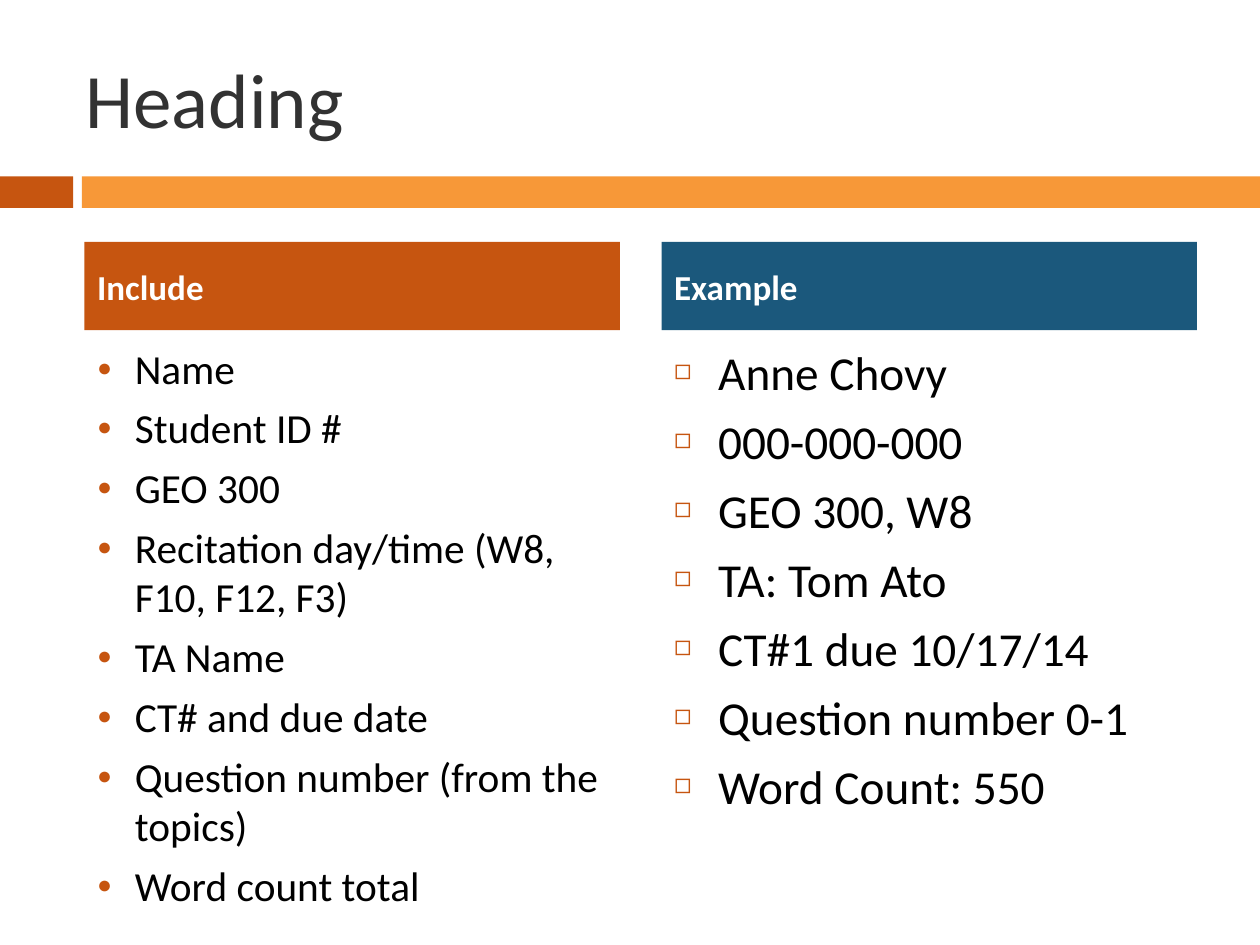
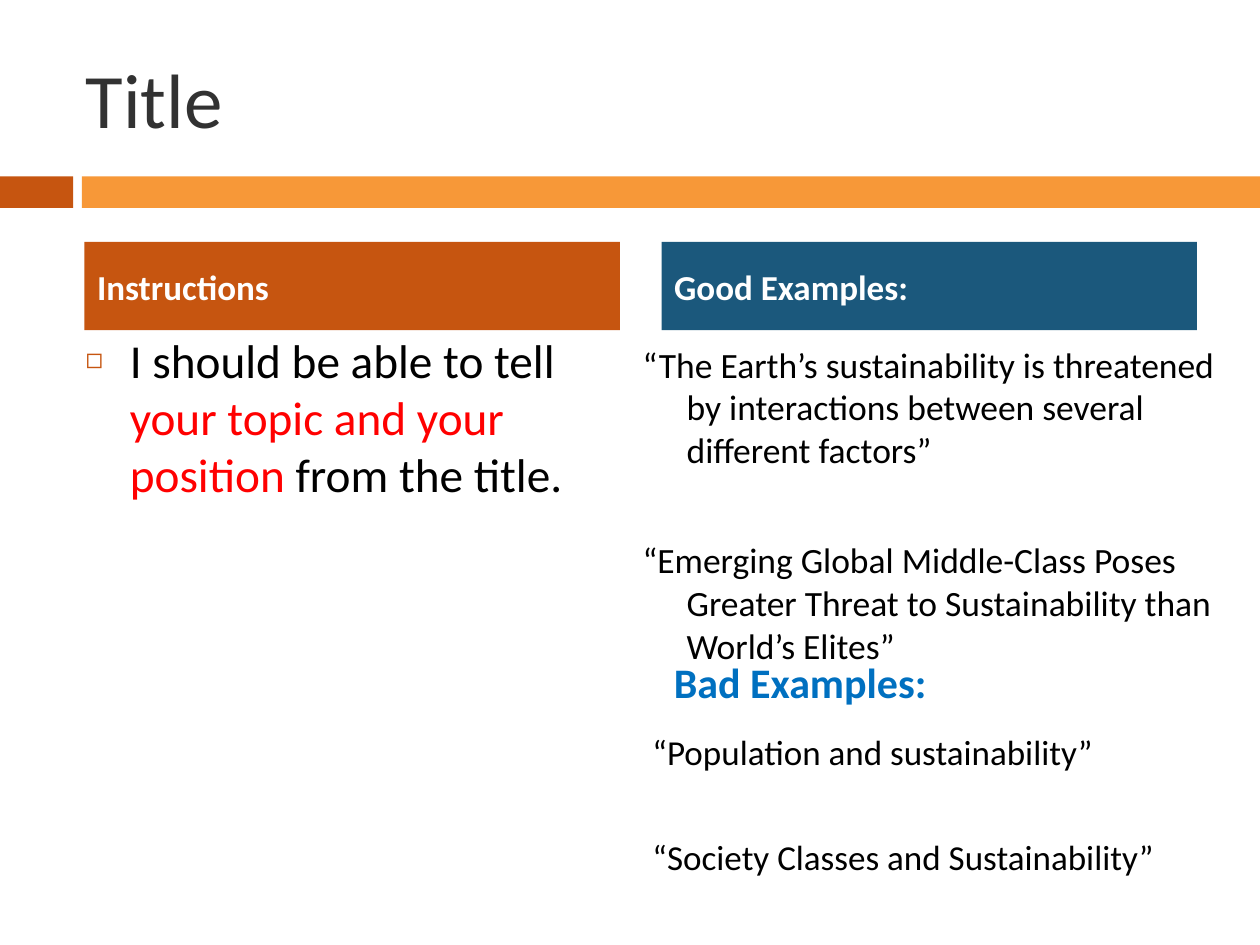
from dataclasses import dataclass

from lxml.etree import SubElement
from pptx import Presentation
from pptx.dml.color import RGBColor
from pptx.enum.shapes import MSO_SHAPE
from pptx.enum.text import MSO_ANCHOR, MSO_AUTO_SIZE, PP_ALIGN
from pptx.oxml.ns import qn
from pptx.util import Inches, Pt

RUST = RGBColor(0xC6, 0x55, 0x10)
ORANGE = RGBColor(0xF7, 0x98, 0x38)
NAVY = RGBColor(0x1B, 0x58, 0x7C)
BLUE = RGBColor(0x00, 0x70, 0xC0)
RED = RGBColor(0xFF, 0x00, 0x00)
CHARCOAL = RGBColor(0x32, 0x32, 0x32)
BLACK = RGBColor(0x00, 0x00, 0x00)
WHITE = RGBColor(0xFF, 0xFF, 0xFF)

FONT = "Calibri"
COMPARISON_LAYOUT = 4
ROUND_BULLET = "●"
SQUARE_BULLET = "◻"


@dataclass(frozen=True)
class Box:
    left: float
    top: float
    width: float
    height: float

    def lengths(self) -> tuple:
        return tuple(Inches(n) for n in (self.left, self.top, self.width, self.height))


@dataclass(frozen=True)
class TextList:
    """Each item is a string or a list of (text, colour) runs."""
    box: Box
    items: list
    size: float
    indent: float = 0.35
    space_before: float = 7
    item_gap: float = 0
    bullet: str = ""


@dataclass(frozen=True)
class Column:
    heading: str
    content: TextList


TITLE_BOX = Box(0.58, 0.3, 8.92, 0.95)
BANDS = [(Box(0, 1.4, 0.58, 0.25), RUST), (Box(0.65, 1.4, 9.35, 0.25), ORANGE)]
HEADINGS = [(Box(0.67, 1.92, 4.25, 0.7), RUST), (Box(5.25, 1.92, 4.25, 0.7), NAVY)]


def place(shape, box: Box) -> None:
    shape.left, shape.top, shape.width, shape.height = box.lengths()


def set_bullet(paragraph, bullet: str) -> None:
    properties = paragraph._p.get_or_add_pPr()
    if not bullet:
        SubElement(properties, qn("a:buNone"))
        return
    colour = SubElement(properties, qn("a:buClr"))
    SubElement(colour, qn("a:srgbClr"), val=str(RUST))
    SubElement(properties, qn("a:buSzPct"), val="60000")
    SubElement(properties, qn("a:buFont"), typeface="Arial")
    SubElement(properties, qn("a:buChar"), char=bullet)


def write(shape, items: list, *, size: float, colour: RGBColor = BLACK,
          bold: bool = False, anchor=MSO_ANCHOR.TOP, space_before: float = 0,
          item_gap: float = 0, indent: float = 0, bullet: str = "") -> None:
    """Fill a shape with one paragraph per item; item_gap replaces later spacing."""
    frame = shape.text_frame
    frame.word_wrap = True
    frame.auto_size = MSO_AUTO_SIZE.NONE
    frame.vertical_anchor = anchor
    for index, item in enumerate(items):
        paragraph = frame.add_paragraph() if index else frame.paragraphs[0]
        paragraph.alignment = PP_ALIGN.LEFT
        paragraph.space_before = Pt(item_gap if index and item_gap else space_before)
        properties = paragraph._p.get_or_add_pPr()
        properties.set("marL", str(Inches(indent)))
        properties.set("indent", str(-Inches(indent)))
        set_bullet(paragraph, bullet)
        runs = [(item, colour)] if isinstance(item, str) else item
        for text, run_colour in runs:
            run = paragraph.add_run()
            run.text = text
            run.font.name = FONT
            run.font.size = Pt(size)
            run.font.bold = bold
            run.font.color.rgb = run_colour


def write_list(shape, content: TextList) -> None:
    place(shape, content.box)
    write(shape, content.items, size=content.size, indent=content.indent,
          space_before=content.space_before, item_gap=content.item_gap,
          bullet=content.bullet)


def add_bands_to_layout(slide) -> None:
    """Draw the bands on a slide, then move them to the layout all slides share."""
    for number, (box, colour) in enumerate(BANDS, start=101):
        band = slide.shapes.add_shape(MSO_SHAPE.RECTANGLE, *box.lengths())
        band.shadow.inherit = False
        band.fill.solid()
        band.fill.fore_color.rgb = colour
        band.line.fill.background()
        band.element.nvSpPr.cNvPr.set("id", str(number))
        slide.slide_layout.shapes.element.append(band.element)


def add_comparison(presentation, title: str, columns: list[Column]):
    slide = presentation.slides.add_slide(presentation.slide_layouts[COMPARISON_LAYOUT])
    title_shape, *bodies = slide.placeholders
    place(title_shape, TITLE_BOX)
    write(title_shape, [title], size=44, colour=CHARCOAL, anchor=MSO_ANCHOR.MIDDLE)
    for column, (box, fill), heading, body in zip(columns, HEADINGS, bodies[::2], bodies[1::2]):
        place(heading, box)
        heading.fill.solid()
        heading.fill.fore_color.rgb = fill
        write(heading, [column.heading], size=20, colour=WHITE, bold=True,
              anchor=MSO_ANCHOR.MIDDLE, space_before=5.8)
        write_list(body, column.content)
    return slide


def add_bad_examples(slide) -> None:
    heading = slide.shapes.add_textbox(*Box(5.25, 4.83, 4.08, 0.83).lengths())
    write(heading, ["Bad Examples:"], size=24, colour=BLUE, bold=True,
          anchor=MSO_ANCHOR.BOTTOM, space_before=5.8)
    examples = TextList(
        Box(5.08, 5.75, 4.5, 1.75),
        ["“Population and sustainability”", "“Society Classes and Sustainability”"],
        size=20, indent=0.3, space_before=5.8, item_gap=36)
    write_list(slide.shapes.add_textbox(*examples.box.lengths()), examples)


def main() -> None:
    presentation = Presentation()
    presentation.slide_width = Inches(10)
    presentation.slide_height = Inches(7.5)

    include = TextList(
        Box(0.67, 2.67, 4.42, 4),
        ["Name", "Student ID #", "GEO 300", "Recitation day/time (W8, F10, F12, F3)",
         "TA Name", "CT# and due date", "Question number (from the topics)",
         "Word count total"],
        size=23.6, indent=0.3, space_before=5.8, bullet=ROUND_BULLET)
    example = TextList(
        Box(5.25, 2.67, 4.25, 3.92),
        ["Anne Chovy", "000-000-000", "GEO 300, W8", "TA: Tom Ato",
         "CT#1 due 10/17/14", "Question number 0-1", "Word Count: 550"],
        size=27, bullet=SQUARE_BULLET)
    heading_slide = add_comparison(
        presentation, "Heading", [Column("Include", include), Column("Example", example)])
    add_bands_to_layout(heading_slide)

    instructions = TextList(
        Box(0.58, 2.58, 4.08, 4.25),
        [[("I should be able to tell ", BLACK),
          ("your topic and your position ", RED),
          ("from the title.", BLACK)]],
        size=27, bullet=SQUARE_BULLET)
    good_examples = TextList(
        Box(5, 2.67, 4.75, 2.33),
        ["“The Earth’s sustainability is threatened by interactions between several "
         "different factors”",
         "“Emerging Global Middle-Class Poses Greater Threat to Sustainability than "
         "World’s Elites”"],
        size=20.3, item_gap=38.8)
    title_slide = add_comparison(
        presentation, "Title",
        [Column("Instructions", instructions), Column("Good Examples:", good_examples)])
    add_bad_examples(title_slide)

    presentation.save("out.pptx")


if __name__ == "__main__":
    main()
